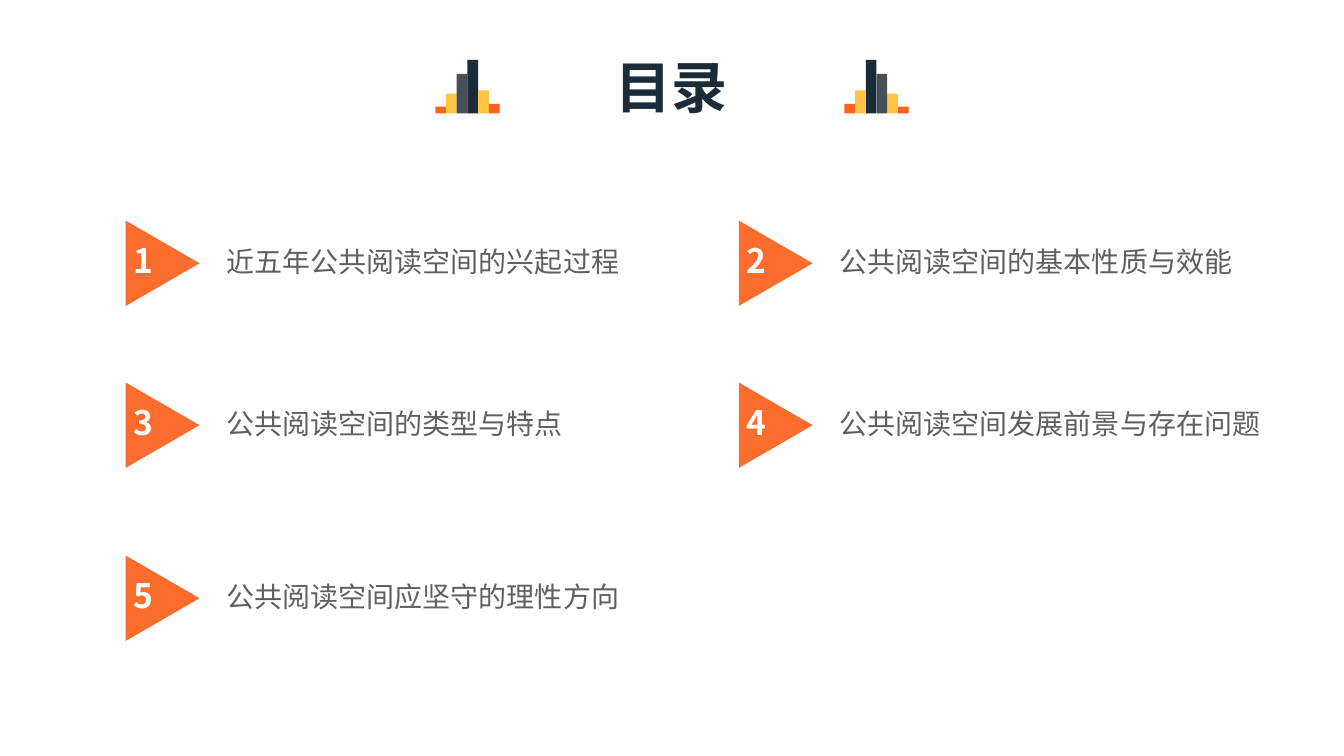
"""Build the contents slide with five numbered topics."""
from dataclasses import dataclass
from lxml.etree import SubElement
from pptx import Presentation
from pptx.dml.color import RGBColor
from pptx.enum.text import MSO_ANCHOR, PP_ALIGN
from pptx.enum.shapes import MSO_SHAPE
from pptx.oxml.ns import qn
from pptx.util import Cm, Pt


@dataclass(frozen=True)
class Theme:
    font: str = "Noto Sans CJK SC"
    white: str = "FFFFFF"
    navy: str = "1C2B38"
    slate: str = "464F5A"
    gold: str = "FFC543"
    red: str = "FC611F"
    orange: str = "FC6C2C"
    gray: str = "5F5F5F"
    title: int = 40
    label: int = 20
    number: int = 24


theme = Theme()


def write(frame, text, size, color, bold=False, align=PP_ALIGN.LEFT):
    frame.word_wrap = True
    para = frame.paragraphs[0]
    para.alignment = align
    run = para.add_run()
    run.text = text
    font = run.font
    font.name = theme.font
    font.size = Pt(size)
    font.bold = bold
    font.color.rgb = RGBColor.from_string(color)
    SubElement(run._r.get_or_add_rPr(), qn("a:ea"), typeface=theme.font)


def paint(shape, color):
    shape.shadow.inherit = False
    shape.fill.solid()
    shape.fill.fore_color.rgb = RGBColor.from_string(color)
    shape.line.fill.background()


deck = Presentation()
deck.slide_width, deck.slide_height = Cm(33.87), Cm(19.05)
slide = deck.slides.add_slide(deck.slide_layouts[5])
shapes = slide.shapes
slide.background.fill.solid()
slide.background.fill.fore_color.rgb = RGBColor.from_string(theme.white)

title = shapes.title
title.left, title.top, title.width, title.height = Cm(12.6), Cm(0.81), Cm(8.66), Cm(2.74)
title.text_frame.vertical_anchor = MSO_ANCHOR.MIDDLE
write(title.text_frame, "目录", theme.title, theme.navy, True, PP_ALIGN.CENTER)

bars = [
    (0.17, theme.red), (0.5, theme.gold), (1.0, theme.slate),
    (1.35, theme.navy), (0.58, theme.gold), (0.24, theme.red),
]
thick, base = 0.27, 2.86
for start, step in ((10.97, thick), (22.63, -thick)):
    group = shapes.add_group_shape()
    for index, (tall, color) in enumerate(bars):
        left = start + index * step
        bar = group.shapes.add_shape(
            MSO_SHAPE.RECTANGLE, Cm(left), Cm(base - tall), Cm(thick), Cm(tall))
        paint(bar, color)

topics = [
    "近五年公共阅读空间的兴起过程",
    "公共阅读空间的基本性质与效能",
    "公共阅读空间的类型与特点",
    "公共阅读空间发展前景与存在问题",
    "公共阅读空间应坚守的理性方向",
]
cols = (3.17, 18.62)
rows = (5.56, 9.64, 14.0)
wide, high = 1.86, 2.15
for index, topic in enumerate(topics):
    row, col = divmod(index, len(cols))
    left, top = cols[col], rows[row]

    pen = shapes.build_freeform(Cm(left), Cm(top))
    pen.add_line_segments([
        (Cm(left + wide), Cm(top + high / 2)),
        (Cm(left), Cm(top + high)),
    ])
    paint(pen.convert_to_shape(), theme.orange)

    label = shapes.add_textbox(Cm(left + 2.54), Cm(top - 0.05), Cm(10.8), Cm(high)).text_frame
    label.margin_left = label.margin_right = label.margin_top = label.margin_bottom = 0
    label.vertical_anchor = MSO_ANCHOR.MIDDLE
    write(label, topic, theme.label, theme.gray)

    number = shapes.add_textbox(Cm(left - 0.12), Cm(top + 0.36), Cm(1.13), Cm(1.35))
    write(number.text_frame, str(index + 1), theme.number, theme.white, True, PP_ALIGN.CENTER)

deck.save("out.pptx")
